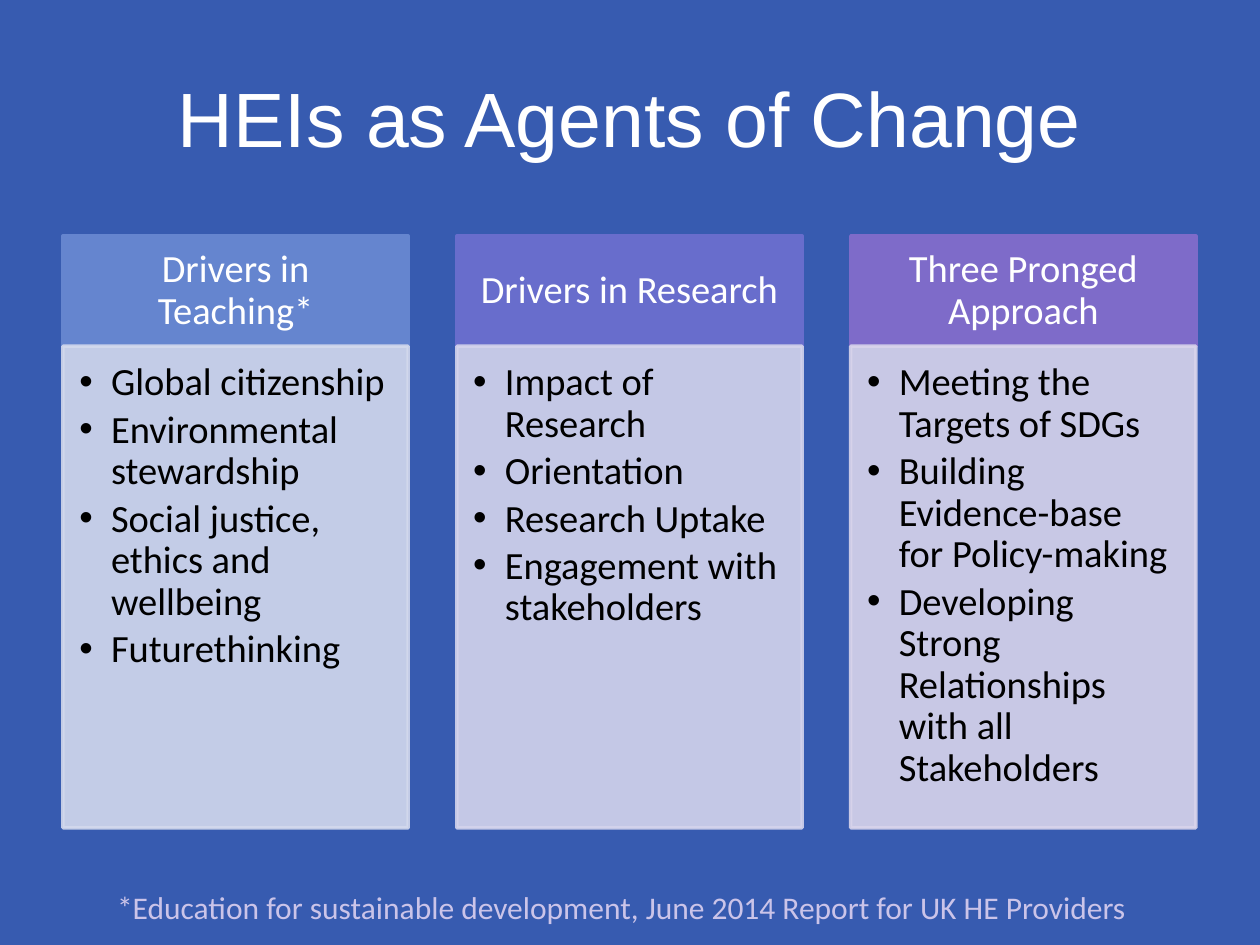
from lxml.etree import SubElement
from pptx import Presentation
from pptx.dml.color import RGBColor
from pptx.enum.shapes import MSO_SHAPE
from pptx.enum.text import MSO_ANCHOR, PP_ALIGN
from pptx.oxml.ns import qn
from pptx.util import Cm, Pt

COLORS = {
    "background": "375BB0", "white": "FFFFFF", "black": "000000",
    "footnote": "CBC4E9",
    "teaching": "6585CF", "teaching_pale": "D3D9ED",
    "research": "686DCC", "research_pale": "D4D4EC",
    "approach": "7E6BC9", "approach_pale": "D8D4EB",
}

COLUMNS = [
    ("teaching", "Drivers in Teaching*",
     ["Global citizenship", "Environmental stewardship",
      "Social justice, ethics and wellbeing", "Futurethinking"]),
    ("research", "Drivers in Research",
     ["Impact of Research", "Orientation", "Research Uptake",
      "Engagement with stakeholders"]),
    ("approach", "Three Pronged Approach",
     ["Meeting the Targets of SDGs",
      "Building Evidence-base for Policy-making",
      "Developing Strong Relationships with all Stakeholders"]),
]

COLUMN_LEFT, COLUMN_WIDTH, COLUMN_PITCH = 1.27, 6.96, 7.94
HEADING_TOP, HEADING_HEIGHT = 4.76, 2.22
LIST_TOP, LIST_HEIGHT = 6.98, 9.71


def write(shape, lines, size, color, font="Calibri", align=PP_ALIGN.LEFT,
          anchor=MSO_ANCHOR.TOP, insets=(0.25, 0.13, 0.25, 0.13)):
    """Fill the shape with one paragraph per line; insets are in cm."""
    frame = shape.text_frame
    frame.text = "\n".join(lines)
    frame.word_wrap = True
    frame.vertical_anchor = anchor
    frame.margin_left, frame.margin_top, frame.margin_right, frame.margin_bottom = map(Cm, insets)
    for paragraph in frame.paragraphs:
        paragraph.alignment = align
        for run in paragraph.runs:
            run.font.size = Pt(size)
            run.font.name = font
            run.font.color.rgb = RGBColor.from_string(COLORS[color])
    return frame.paragraphs


def add_panel(top, left, height, color, opacity=100):
    panel = slide.shapes.add_shape(
        MSO_SHAPE.RECTANGLE, Cm(left), Cm(top), Cm(COLUMN_WIDTH), Cm(height))
    panel.shadow.inherit = False
    panel.line.width = Pt(2)
    for fill in (panel.fill, panel.line.fill):
        fill.solid()
        fill.fore_color.rgb = RGBColor.from_string(COLORS[color])
    if opacity < 100:
        for rgb in panel.element.spPr.iter(qn("a:srgbClr")):
            SubElement(rgb, qn("a:alpha"), val=str(opacity * 1000))
    return panel


prs = Presentation()
prs.slide_width, prs.slide_height = Cm(25.4), Cm(19.05)
slide = prs.slides.add_slide(prs.slide_layouts[6])
slide.background.fill.solid()
slide.background.fill.fore_color.rgb = RGBColor.from_string(COLORS["background"])

title = slide.shapes.add_textbox(Cm(1.27), Cm(0.76), Cm(22.86), Cm(3.18))
write(title, ["HEIs as Agents of Change"], 44, "white", font="Arial",
      align=PP_ALIGN.CENTER, anchor=MSO_ANCHOR.MIDDLE)

footnote = slide.shapes.add_textbox(Cm(2.11), Cm(17.78), Cm(22.43), Cm(1.8))
write(footnote,
      ["*Education for sustainable development, June 2014 Report for UK HE Providers"],
      18, "footnote")

for index, (theme, heading, points) in enumerate(COLUMNS):
    left = COLUMN_LEFT + index * COLUMN_PITCH

    heading_panel = add_panel(HEADING_TOP, left, HEADING_HEIGHT, theme)
    for paragraph in write(heading_panel, [heading], 22, "white",
                           align=PP_ALIGN.CENTER, anchor=MSO_ANCHOR.MIDDLE,
                           insets=(0.43, 0.25, 0.43, 0.25)):
        paragraph.line_spacing = 0.9

    list_panel = add_panel(LIST_TOP, left, LIST_HEIGHT, theme + "_pale", opacity=90)
    for paragraph in write(list_panel, points, 22, "black",
                           insets=(0.33, 0.33, 0.43, 0.48)):
        paragraph.level = 1
        paragraph.line_spacing = 0.9
        paragraph.space_after = Pt(3.3)
        properties = paragraph._p.get_or_add_pPr()
        properties.set("marL", str(Cm(0.64)))
        properties.set("indent", str(-Cm(0.64)))
        SubElement(properties, qn("a:buFont"), typeface="Arial")
        SubElement(properties, qn("a:buChar"), char="•")

prs.save("out.pptx")
